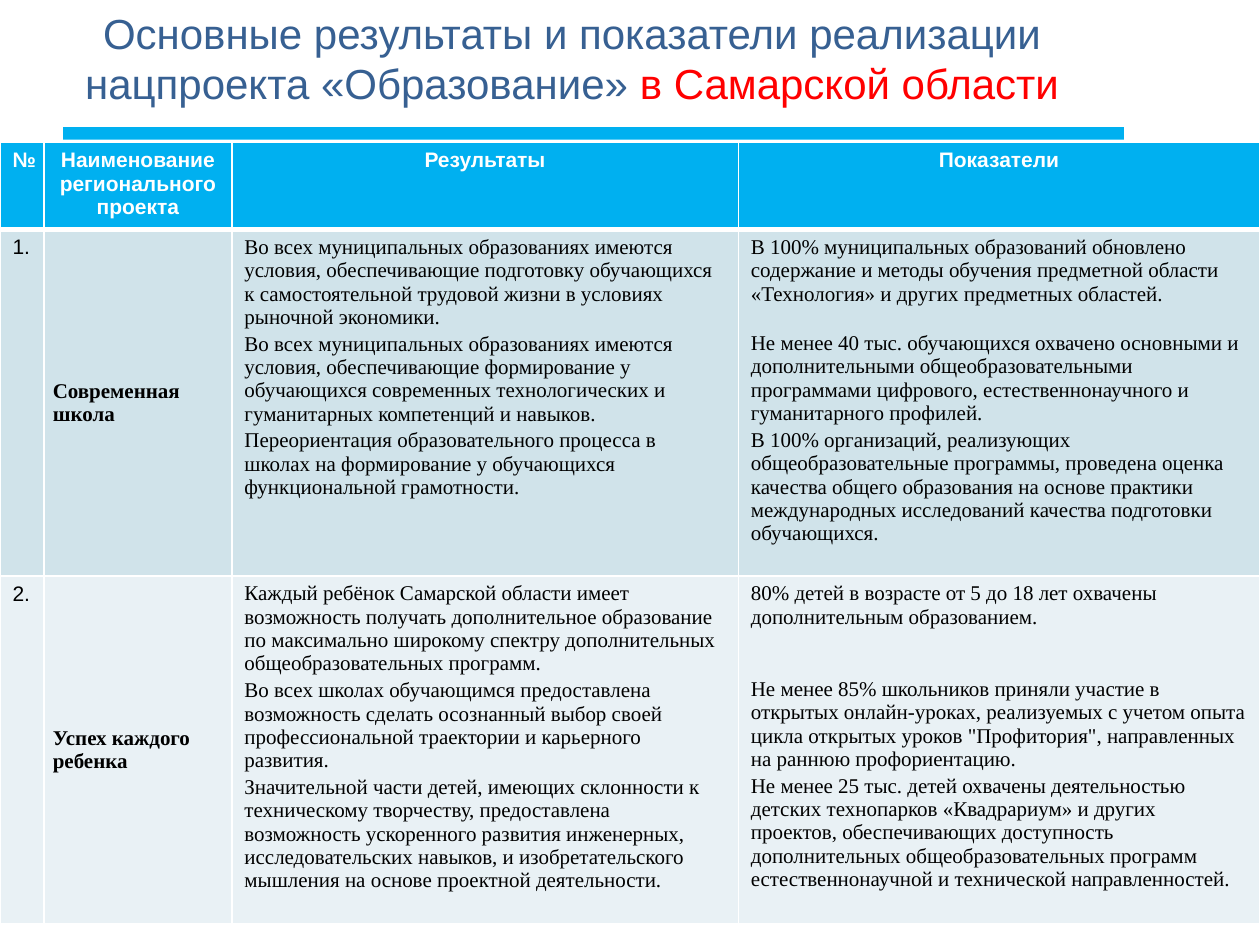
from lxml import etree
from pptx import Presentation
from pptx.dml.color import RGBColor
from pptx.enum.shapes import MSO_SHAPE
from pptx.enum.text import MSO_ANCHOR, MSO_AUTO_SIZE, PP_ALIGN
from pptx.oxml.ns import qn
from pptx.util import Pt

CENTER, LEFT = PP_ALIGN.CENTER, PP_ALIGN.LEFT
TOP, MIDDLE = MSO_ANCHOR.TOP, MSO_ANCHOR.MIDDLE
NO_FIT = MSO_AUTO_SIZE.NONE
RECTANGLE = MSO_SHAPE.RECTANGLE

COLORS = {
    "title": "376092", "accent": "FF0000", "bar": "00B0F0", "white": "FFFFFF",
    "text": "000000", "band1": "D0E3EA", "band2": "E9F1F5",
}
FONTS = {
    "title": {"name": "Arial", "size": Pt(24), "bold": False},
    "header": {"name": "Arial", "size": Pt(12), "bold": True},
    "number": {"name": "Arial", "size": Pt(12), "bold": False},
    "project": {"name": "Times New Roman", "size": Pt(12), "bold": True},
    "body": {"name": "Times New Roman", "size": Pt(12), "bold": False},
}
COLUMN_WIDTHS = [25.2, 107.3, 289.4, 298.1]
ROW_HEIGHTS = [49.7, 198, 198.7]

HEADERS = ["№", "Наименование регионального проекта", "Результаты", "Показатели"]
# Each paragraph is a pair: space before in points, text
PROJECTS = [
    ("1.", "Современная школа", [
        (0, "Во всех муниципальных образованиях имеются условия, обеспечивающие "
            "подготовку обучающихся к самостоятельной трудовой жизни в условиях "
            "рыночной экономики."),
        (0, "Во всех муниципальных образованиях имеются условия, обеспечивающие "
            "формирование у обучающихся современных технологических и "
            "гуманитарных компетенций и навыков."),
        (0, "Переориентация образовательного процесса в школах на формирование "
            "у обучающихся функциональной грамотности."),
    ], [
        (0, "В 100% муниципальных образований обновлено содержание и методы "
            "обучения предметной области «Технология» и других предметных "
            "областей."),
        (13, "Не менее 40 тыс. обучающихся охвачено основными и дополнительными "
             "общеобразовательными программами цифрового, естественнонаучного и "
             "гуманитарного профилей."),
        (0, "В 100% организаций, реализующих общеобразовательные программы, "
            "проведена оценка качества общего образования на основе практики "
            "международных исследований качества подготовки обучающихся."),
    ]),
    ("2.", "Успех каждого ребенка", [
        (0, "Каждый ребёнок Самарской области имеет возможность получать "
            "дополнительное образование по максимально широкому спектру "
            "дополнительных общеобразовательных программ."),
        (0, "Во всех школах обучающимся предоставлена возможность сделать "
            "осознанный выбор своей профессиональной траектории и карьерного "
            "развития."),
        (0, "Значительной части детей, имеющих склонности к техническому "
            "творчеству, предоставлена возможность ускоренного развития "
            "инженерных, исследовательских навыков, и изобретательского "
            "мышления на основе проектной деятельности."),
    ], [
        (0, "80% детей в возрасте от 5 до 18 лет охвачены дополнительным "
            "образованием."),
        (26, "Не менее 85% школьников приняли участие в открытых онлайн-уроках, "
             "реализуемых с учетом опыта цикла открытых уроков \"Профитория\", "
             "направленных на раннюю профориентацию."),
        (0, "Не менее 25 тыс. детей охвачены деятельностью детских технопарков "
            "«Квадрариум» и других проектов, обеспечивающих доступность "
            "дополнительных общеобразовательных программ естественнонаучной и "
            "технической направленностей."),
    ]),
]


def color(name):
    return RGBColor.from_string(COLORS[name])


def set_format(target, values):
    for name, value in values.items():
        setattr(target, name, value)


def add_run(paragraph, text, font, color_name):
    run = paragraph.add_run()
    run.text = text
    set_format(run.font, FONTS[font])
    run.font.color.rgb = color(color_name)


def add_title(slide):
    title = slide.shapes.title
    set_format(title, {"left": 0, "top": 0, "width": Pt(653.8), "height": Pt(66.2)})
    set_format(title.text_frame, {
        "word_wrap": True, "auto_size": NO_FIT, "vertical_anchor": MIDDLE})
    paragraph = title.text_frame.paragraphs[0]
    paragraph.alignment = CENTER
    add_run(paragraph, "Основные результаты и показатели реализации "
            "нацпроекта «Образование» ", "title", "title")
    add_run(paragraph, "в Самарской области", "title", "accent")


def add_bar(slide):
    bar = slide.shapes.add_shape(RECTANGLE, Pt(36), Pt(72.7), Pt(606.2), Pt(7.2))
    bar.shadow.inherit = False
    bar.fill.solid()
    bar.fill.fore_color.rgb = color("bar")
    bar.line.fill.background()


def set_borders(cell, widths):
    properties = cell._tc.get_or_add_tcPr()
    for index, (side, width) in enumerate(widths.items()):
        line = etree.Element(qn(f"a:{side}"), w=str(Pt(width)))
        fill = etree.SubElement(line, qn("a:solidFill"))
        etree.SubElement(fill, qn("a:srgbClr"), val=COLORS["white"])
        properties.insert(index, line)


def fill_cell(cell, paragraphs, font, fill, color_name="text",
              alignment=LEFT, space_after=0):
    cell.fill.solid()
    cell.fill.fore_color.rgb = color(fill)
    cell.vertical_anchor = TOP
    frame = cell.text_frame
    for index, (space_before, text) in enumerate(paragraphs):
        paragraph = frame.add_paragraph() if index else frame.paragraphs[0]
        set_format(paragraph, {
            "alignment": alignment, "space_before": Pt(space_before),
            "space_after": Pt(space_after)})
        add_run(paragraph, text, font, color_name)


def add_project_table(slide):
    table = slide.shapes.add_table(
        len(ROW_HEIGHTS), len(COLUMN_WIDTHS), 0, Pt(81.4),
        Pt(sum(COLUMN_WIDTHS)), Pt(sum(ROW_HEIGHTS))).table
    table.horz_banding = False
    for column, width in zip(table.columns, COLUMN_WIDTHS):
        column.width = Pt(width)
    for row, height in zip(table.rows, ROW_HEIGHTS):
        row.height = Pt(height)

    # Header row
    for column, text in enumerate(HEADERS):
        fill_cell(table.cell(0, column), [(0, text)], "header", "bar", "white", CENTER)

    # One row for each regional project
    for row, (number, project, results, indicators) in enumerate(PROJECTS, start=1):
        fill = f"band{row}"
        fill_cell(table.cell(row, 0), [(0, number)], "number", fill)
        name_cell = table.cell(row, 1)
        fill_cell(name_cell, [(0, project)], "project", fill)
        set_format(name_cell, {
            "vertical_anchor": MIDDLE, "margin_left": Pt(5), "margin_right": Pt(5),
            "margin_top": 0, "margin_bottom": 0})
        for column, texts in ((2, results), (3, indicators)):
            fill_cell(table.cell(row, column), texts, "body", fill, space_after=2)

    # White grid, thicker below the header
    for row in range(len(ROW_HEIGHTS)):
        for column in range(len(COLUMN_WIDTHS)):
            set_borders(table.cell(row, column), {
                "lnL": 1, "lnR": 1, "lnT": 3 if row == 1 else 1,
                "lnB": 3 if row == 0 else 1})


def main():
    presentation = Presentation()
    set_format(presentation, {"slide_width": Pt(720), "slide_height": Pt(540)})
    slide = presentation.slides.add_slide(presentation.slide_layouts[5])
    add_bar(slide)
    add_project_table(slide)
    add_title(slide)
    presentation.save("out.pptx")


if __name__ == "__main__":
    main()
